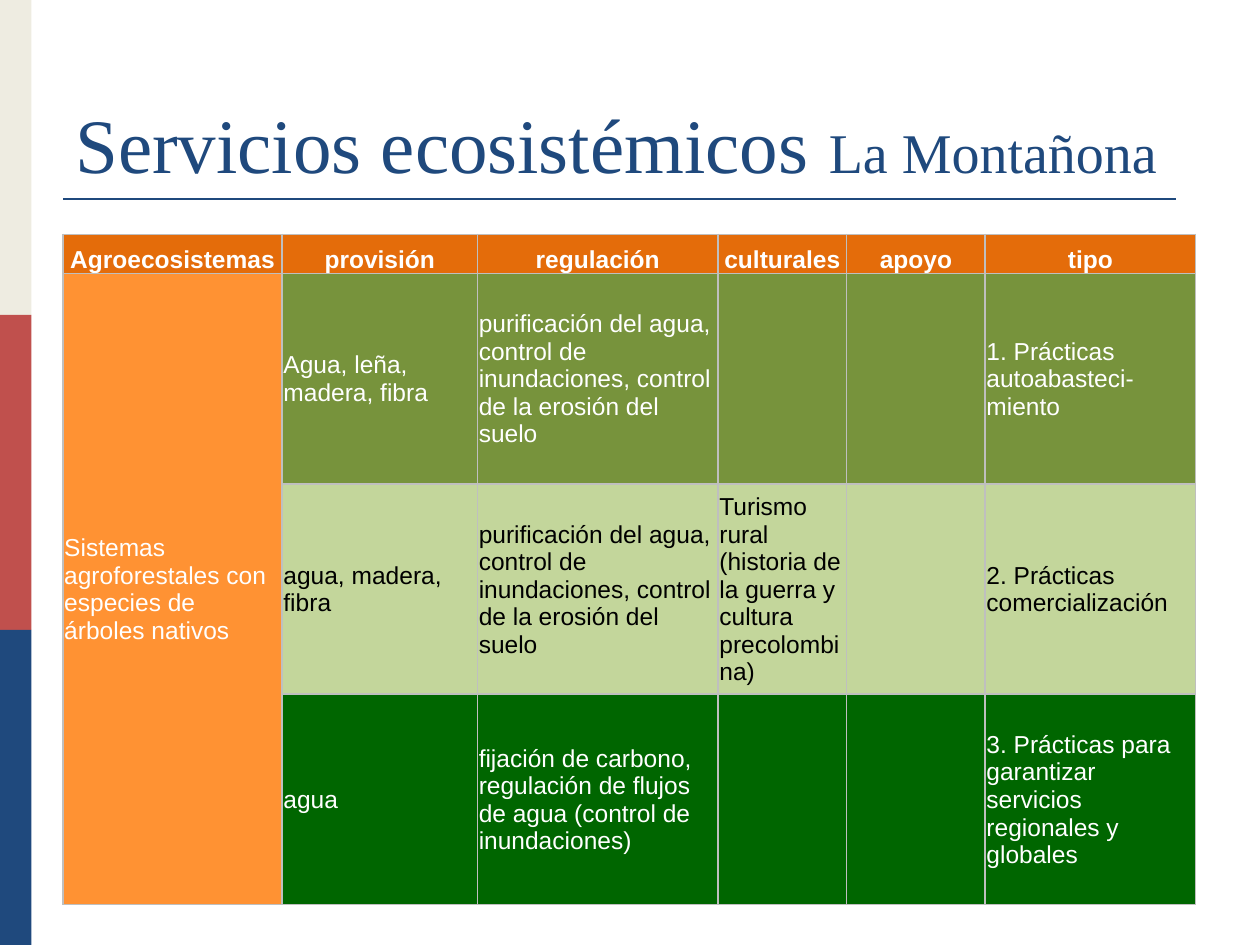
from lxml import etree
from pptx import Presentation
from pptx.dml.color import RGBColor
from pptx.enum.shapes import MSO_CONNECTOR, MSO_SHAPE
from pptx.enum.text import MSO_ANCHOR, PP_ALIGN
from pptx.oxml.ns import qn
from pptx.util import Inches, Pt

RECT = MSO_SHAPE.RECTANGLE
LINE = MSO_CONNECTOR.STRAIGHT
LEFT, CENTER = PP_ALIGN.LEFT, PP_ALIGN.CENTER
MIDDLE, BOTTOM = MSO_ANCHOR.MIDDLE, MSO_ANCHOR.BOTTOM

COLORS = {
    "cream": "EEECE1", "red": "C0504D", "navy": "1F497D", "white": "FFFFFF",
    "black": "000000", "rust": "E46C0A", "orange": "FF9233", "olive": "77933C",
    "lime": "C3D69B", "green": "006600", "gray": "BFBFBF",
}
COLS = [1.74, 1.55, 1.91, 1.02, 1.1, 1.67]
ROWS = [0.31, 1.67, 1.67, 1.67]
HEADS = ["Agroecosistemas", "provisión", "regulación", "culturales", "apoyo", "tipo"]
SYSTEM = "Sistemas agroforestales con especies de árboles nativos"
WATER = "purificación del agua, control de inundaciones, control de la erosión del suelo"
BODY = [
    ("olive", "white", ["Agua, leña, madera, fibra", WATER, "", "",
                        "1. Prácticas autoabasteci-miento"]),
    ("lime", "black", ["agua, madera, fibra", WATER,
                       "Turismo rural (historia de la guerra y cultura precolombina)", "",
                       "2. Prácticas comercialización"]),
    ("green", "white", ["agua",
                        "fijación de carbono, regulación de flujos de agua (control de inundaciones)",
                        "", "", "3. Prácticas para garantizar servicios regionales y globales"]),
]


class Deck:
    """Holds the style and the current slide, and draws each kind of element."""

    def __init__(self, slide):
        self.slide = slide
        self.serif = "Times New Roman"
        self.sans = "Arial"
        self.inset = {"margin_left": Inches(0.01), "margin_right": Inches(0.01),
                      "margin_top": Inches(0.01), "margin_bottom": 0}

    def color(self, name):
        return RGBColor.from_string(COLORS[name])

    def apply(self, item, values):
        for key, value in values.items():
            setattr(item, key, value)

    def paint(self, item, name):
        item.fill.solid()
        item.fill.fore_color.rgb = self.color(name)

    def label(self, para, text, color, **style):
        run = para.add_run()
        run.text = text
        self.apply(run.font, style)
        run.font.color.rgb = self.color(color)

    def band(self, x, y, w, h, fill):
        shape = self.slide.shapes.add_shape(RECT, Inches(x), Inches(y), Inches(w), Inches(h))
        shape.shadow.inherit = False
        self.paint(shape, fill)
        shape.line.fill.background()

    def rule(self, x, y, end, color, width):
        line = self.slide.shapes.add_connector(LINE, Inches(x), Inches(y), Inches(end), Inches(y))
        line.line.color.rgb = self.color(color)
        line.line.width = Pt(width)
        etree.SubElement(line._element.spPr, qn("a:effectLst"))

    def title(self, x, y, w, h, runs):
        box = self.slide.shapes.add_textbox(Inches(x), Inches(y), Inches(w), Inches(h))
        self.apply(box.text_frame, {"word_wrap": True, "vertical_anchor": BOTTOM})
        for text, size in runs:
            self.label(box.text_frame.paragraphs[0], text, "navy",
                       name=self.serif, size=Pt(size))

    def border(self, cell, color, width):
        props = cell._tc.get_or_add_tcPr()
        for place, side in enumerate(("lnL", "lnR", "lnT", "lnB")):
            edge = etree.Element(qn(f"a:{side}"), w=str(Pt(width)))
            fill = etree.SubElement(edge, qn("a:solidFill"))
            etree.SubElement(fill, qn("a:srgbClr"), val=COLORS[color])
            props.insert(place, edge)

    def cell(self, cell, text, fill, color="white", bold=False, align=LEFT, anchor=MIDDLE):
        self.apply(cell, {**self.inset, "vertical_anchor": anchor})
        self.paint(cell, fill)
        self.border(cell, "gray", 1)
        para = cell.text_frame.paragraphs[0]
        para.alignment = align
        if text:
            self.label(para, text, color, name=self.sans, size=Pt(14), bold=bold)

    def table(self, x, y, cols, rows):
        frame = self.slide.shapes.add_table(len(rows), len(cols), Inches(x), Inches(y),
                                            Inches(sum(cols)), Inches(sum(rows)))
        table = frame.table
        for col, width in zip(table.columns, cols):
            col.width = Inches(width)
        for row, height in zip(table.rows, rows):
            row.height = Inches(height)
        return table


def main():
    prs = Presentation()
    prs.slide_width, prs.slide_height = Inches(10), Inches(7.5)
    deck = Deck(prs.slides.add_slide(prs.slide_layouts[6]))

    for i, fill in enumerate(("cream", "red", "navy")):
        deck.band(0, 2.5 * i, 0.25, 2.5, fill)
    deck.rule(0.5, 1.58, 9.33, "navy", 1.5)
    deck.title(0.5, 0.3, 9, 1.25, [("Servicios ecosistémicos ", 44), ("La Montañona", 32)])

    table = deck.table(0.5, 1.86, COLS, ROWS)
    for col, text in enumerate(HEADS):
        deck.cell(table.cell(0, col), text, "rust", bold=True, align=CENTER, anchor=BOTTOM)
    for row, (fill, color, texts) in enumerate(BODY, 1):
        deck.cell(table.cell(row, 0), SYSTEM if row == 1 else "", "orange")
        for col, text in enumerate(texts, 1):
            deck.cell(table.cell(row, col), text, fill, color)
    table.cell(1, 0).merge(table.cell(3, 0))

    prs.save("out.pptx")


if __name__ == "__main__":
    main()
